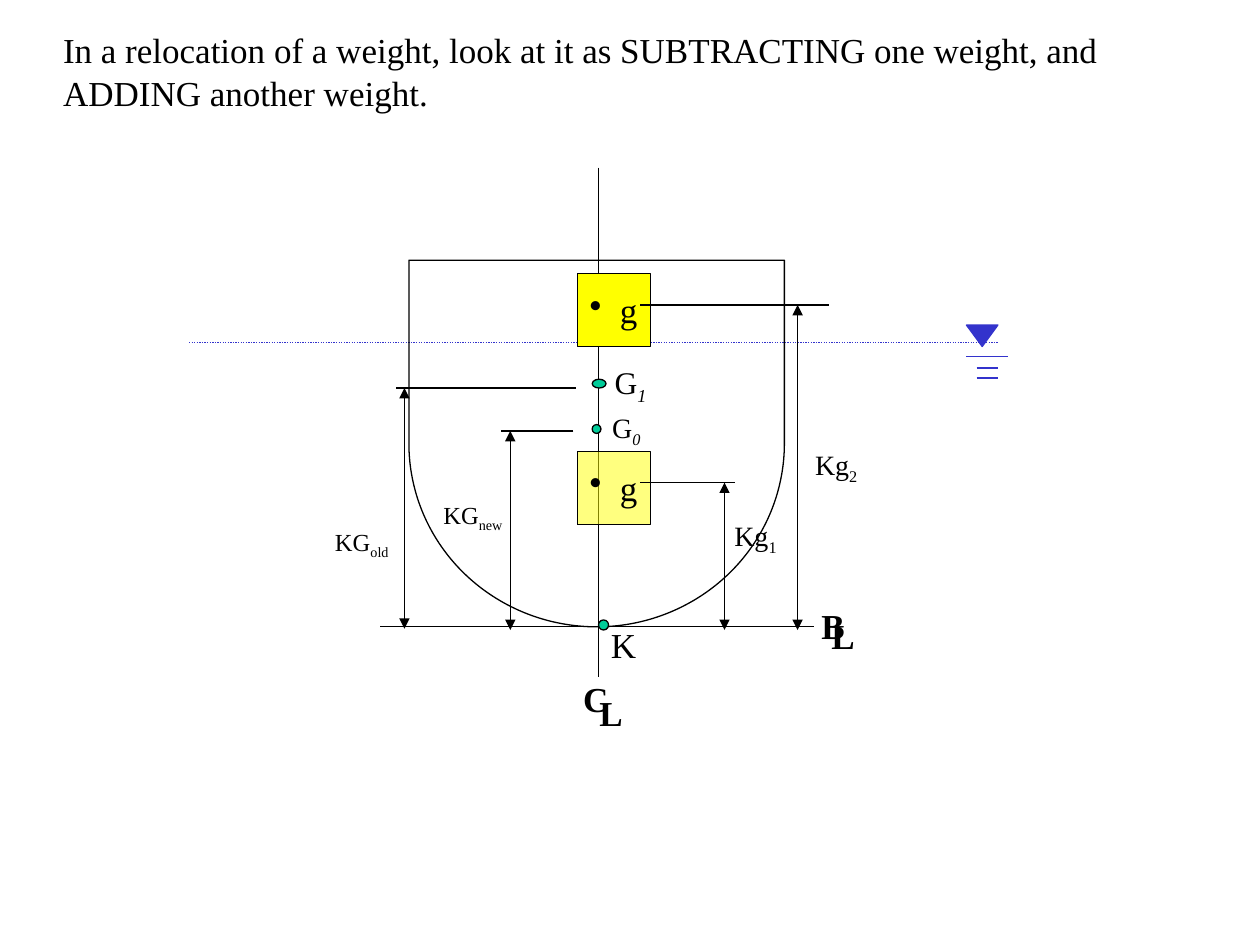
from dataclasses import dataclass
from typing import Optional

from lxml import etree
from pptx import Presentation
from pptx import util as u
from pptx.dml.color import RGBColor
from pptx.enum import dml, shapes, text
from pptx.oxml import ns

BLACK = RGBColor(0x00, 0x00, 0x00)
BLUE = RGBColor(0x33, 0x33, 0xCC)
GREEN = RGBColor(0x00, 0xCC, 0x99)
YELLOW = RGBColor(0xFF, 0xFF, 0x00)
FONT = "Times New Roman"
KIND = shapes.MSO_SHAPE
DOTS = dml.MSO_LINE.ROUND_DOT
AXIS = 4.75


@dataclass
class Line:
    x1: float
    y1: float
    x2: float
    y2: float
    color: RGBColor = BLACK
    dash: Optional[dml.MSO_LINE] = None
    arrows: bool = False


@dataclass
class Shape:
    kind: shapes.MSO_SHAPE
    left: float
    top: float
    width: float
    height: float
    fill: Optional[RGBColor] = None
    edge: RGBColor = BLACK
    weight: float = 0.75
    turn: float = 0


@dataclass
class Label:
    main: str
    left: float
    top: float
    width: float
    height: float
    size: float = 20
    sub: str = ""
    bold: bool = False
    slant: bool = False
    wrap: bool = False


@dataclass
class Weight:
    top: float
    ghost: bool = False


def add_tag(parent, tag: str, **attrs: str):
    return etree.SubElement(parent, ns.qn(tag), attrs)


def style(font, size: float, bold: bool = False) -> None:
    font.name = FONT
    font.size = u.Pt(size)
    font.bold = bold
    font.color.rgb = BLACK


def draw_line(slide, item: Line):
    ends = [u.Inches(v) for v in (item.x1, item.y1, item.x2, item.y2)]
    line = slide.shapes.add_connector(shapes.MSO_CONNECTOR.STRAIGHT, *ends)
    line.line.color.rgb = item.color
    line.line.width = u.Pt(0.75)
    if item.dash:
        line.line.dash_style = item.dash
    props = line._element.spPr
    if item.arrows:
        for tag in ("a:headEnd", "a:tailEnd"):
            add_tag(props.find(ns.qn("a:ln")), tag, type="triangle")
    add_tag(props, "a:effectLst")
    return line


def draw_shape(slide, item: Shape):
    box = [u.Inches(v) for v in (item.left, item.top, item.width, item.height)]
    shape = slide.shapes.add_shape(item.kind, *box)
    shape.shadow.inherit = False
    shape.rotation = item.turn
    if item.fill is None:
        shape.fill.background()
    else:
        shape.fill.solid()
        shape.fill.fore_color.rgb = item.fill
    shape.line.color.rgb = item.edge
    shape.line.width = u.Pt(item.weight)
    return shape


def draw_label(slide, item: Label):
    box = [u.Inches(v) for v in (item.left, item.top, item.width, item.height)]
    label = slide.shapes.add_textbox(*box)
    frame = label.text_frame
    frame.word_wrap = item.wrap
    frame.auto_size = text.MSO_AUTO_SIZE.SHAPE_TO_FIT_TEXT
    para = frame.paragraphs[0]
    para.text = item.main
    style(para.runs[0].font, item.size, item.bold)
    if item.sub:
        run = para.add_run()
        run.text = item.sub
        style(run.font, item.size)
        run.font.italic = item.slant
        run._r.get_or_add_rPr().set("baseline", "-25000")
    return label


def draw_weight(slide, item: Weight):
    shape = draw_shape(slide, Shape(KIND.RECTANGLE, 4.58, item.top, 0.58, 0.58, YELLOW, weight=0.25))
    if item.ghost:
        shape.line.dash_style = DOTS
        color = shape._element.spPr.find(ns.qn("a:solidFill"))[0]
        add_tag(color, "a:alpha", val="50000")
    frame = shape.text_frame
    frame.word_wrap = False
    frame.vertical_anchor = text.MSO_ANCHOR.MIDDLE
    para = frame.paragraphs[0]
    para.text = "g"
    para.alignment = text.PP_ALIGN.CENTER
    style(para.runs[0].font, 20)
    props = para._p.get_or_add_pPr()
    indent = u.Inches(0.24)
    props.set("marL", str(indent))
    props.set("indent", str(-indent))
    add_tag(props, "a:buChar", char="•")
    return shape


def draw_title(slide) -> None:
    title = slide.shapes.title
    title.left, title.top = u.Inches(0.4), u.Inches(0.18)
    title.width, title.height = u.Inches(8.47), u.Inches(0.77)
    frame = title.text_frame
    frame.text = ("In a relocation of a weight, look at it as SUBTRACTING one weight, and\n"
                  "ADDING another weight.")
    frame.word_wrap = False
    frame.auto_size = text.MSO_AUTO_SIZE.SHAPE_TO_FIT_TEXT
    frame.vertical_anchor = text.MSO_ANCHOR.TOP
    for para in frame.paragraphs:
        para.alignment = text.PP_ALIGN.LEFT
        style(para.runs[0].font, 20)


DRAW = {Line: draw_line, Shape: draw_shape, Label: draw_label, Weight: draw_weight}

HULL = [
    Line(1.5, 2.72, 7.92, 2.72, BLUE, DOTS),
    Line(3.02, 4.97, 6.46, 4.97),
    Shape(KIND.FLOWCHART_DELAY, 3.28, 2.03, 2.91, 2.98, turn=90),
    Line(AXIS, 1.33, AXIS, 5.37),
]
CENTER = [
    Label("C", 4.53, 5.33, 0.49, 0.43, bold=True, wrap=True),
    Label("L", 4.66, 5.44, 0.64, 0.43, bold=True, wrap=True),
]
BASE = [
    Label("B", 6.42, 4.75, 0.39, 0.43, bold=True),
    Label("L", 6.5, 4.83, 0.39, 0.43, bold=True),
]
WATER = [
    Shape(KIND.ISOSCELES_TRIANGLE, 7.67, 2.58, 0.25, 0.17, BLUE, BLUE, turn=180),
    Line(7.67, 2.83, 8, 2.83, BLUE),
    Line(7.75, 2.92, 7.92, 2.92, BLUE),
    Line(7.75, 3, 7.92, 3, BLUE),
]
LOADS = [
    Label("K", 4.75, 4.9, 0.4, 0.43),
    Weight(3.58, ghost=True),
    Weight(2.17),
    Shape(KIND.FLOWCHART_CONNECTOR, 4.75, 4.92, 0.08, 0.08, GREEN),
]
HEIGHTS = [
    Line(4.57, 3.08, 3.14, 3.08),
    Line(3.21, 3.08, 3.21, 4.99, arrows=True),
    Label("KG", 2.56, 4.13, 0.72, 0.33, 14, "old", wrap=True),
    Line(4.55, 3.42, 3.98, 3.42),
    Line(4.05, 3.42, 4.05, 5, arrows=True),
    Label("KG", 3.42, 3.92, 0.79, 0.33, 14, "new", wrap=True),
    Label("G", 4.76, 3.21, 0.44, 0.37, 16, "0", slant=True, wrap=True),
    Shape(KIND.FLOWCHART_CONNECTOR, 4.7, 3.37, 0.07, 0.07, GREEN),
    Label("G", 4.78, 2.83, 0.47, 0.4, 18, "1", slant=True, wrap=True),
    Shape(KIND.FLOWCHART_CONNECTOR, 4.7, 3.01, 0.11, 0.07, GREEN),
    Line(5.08, 2.42, 6.58, 2.42),
    Line(5.08, 3.83, 5.83, 3.83),
    Line(5.75, 3.83, 5.75, 5, arrows=True),
    Line(6.33, 2.42, 6.33, 5, arrows=True),
    Label("Kg", 5.73, 4.07, 0.55, 0.37, 16, "1"),
    Label("Kg", 6.37, 3.5, 0.55, 0.37, 16, "2"),
]


def main() -> None:
    deck = Presentation()
    deck.slide_width, deck.slide_height = u.Inches(10), u.Inches(7.5)
    slide = deck.slides.add_slide(deck.slide_layouts[5])
    draw_title(slide)
    for item in HULL:
        DRAW[type(item)](slide, item)
    slide.shapes.add_group_shape([draw_label(slide, item) for item in CENTER])
    for item in BASE + WATER + LOADS + HEIGHTS:
        DRAW[type(item)](slide, item)
    deck.save("out.pptx")


if __name__ == "__main__":
    main()
